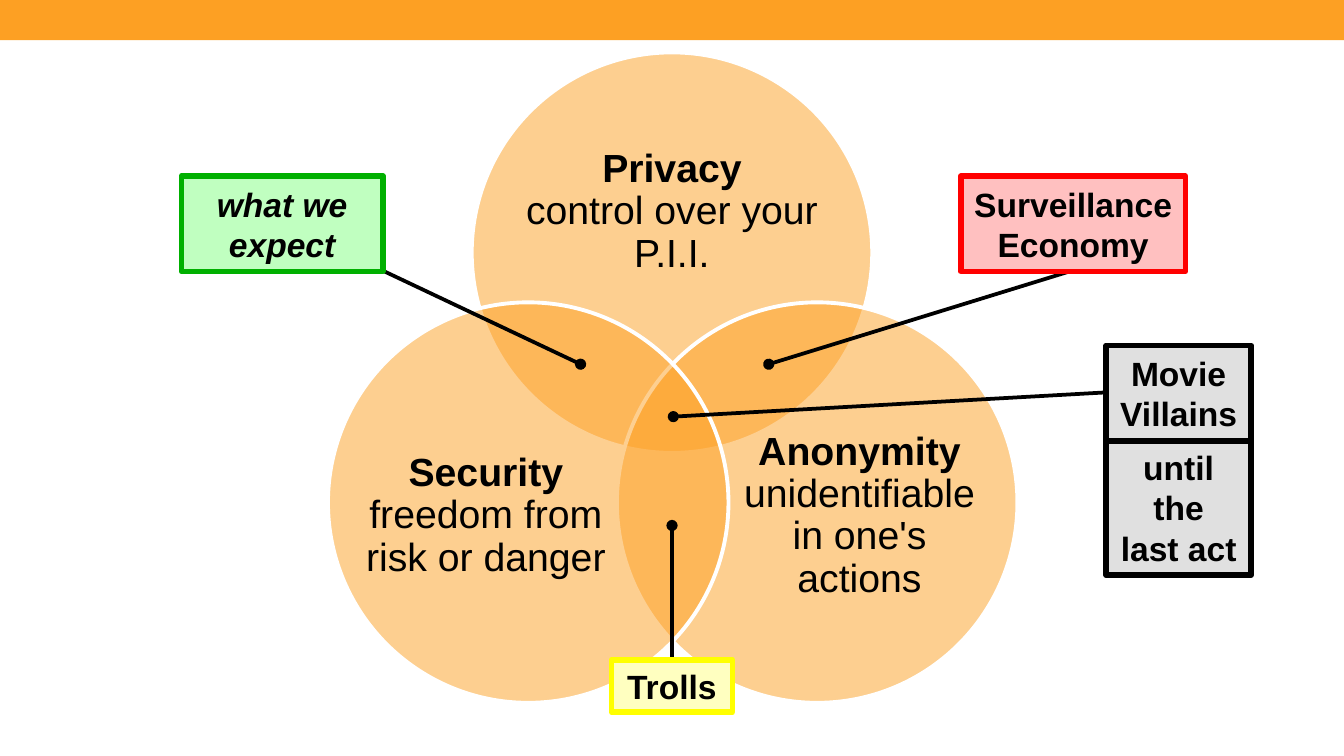
from dataclasses import dataclass

from lxml.etree import SubElement
from pptx import Presentation
from pptx.dml.color import RGBColor
from pptx.enum.shapes import MSO_CONNECTOR, MSO_SHAPE
from pptx.enum.text import MSO_ANCHOR, MSO_AUTO_SIZE, PP_ALIGN
from pptx.oxml.ns import qn
from pptx.shapes.autoshape import Shape
from pptx.slide import Slide
from pptx.text.text import _Paragraph
from pptx.util import Inches, Pt


@dataclass(frozen=True)
class Theme:
    font: str = "Arial"
    accent: str = "FDA023"
    circle_line: str = "FFFFFF"
    ink: str = "000000"
    circle_size: float = 21
    label_size: float = 18
    circle_alpha: int = 50
    circle_border: float = 2.08
    label_border: float = 3
    pointer: float = 2


@dataclass(frozen=True)
class Box:
    left: float
    top: float
    width: float
    height: float

    def lengths(self) -> list[Inches]:
        return [Inches(v) for v in (self.left, self.top, self.width, self.height)]


@dataclass(frozen=True)
class Circle:
    left: float
    top: float
    text_box: Box
    heading: str
    detail: str
    own_line: bool = False


@dataclass(frozen=True)
class Label:
    box: Box
    text: str
    fill: str
    line: str
    italic: bool = False


@dataclass(frozen=True)
class Pointer:
    x1: float
    y1: float
    x2: float
    y2: float


THEME = Theme()
DIAMETER = 2.98
LOWER_TOP = 2.25
LABEL_TOP, LABEL_HEIGHT = 1.31, 0.71

CIRCLES = [
    Circle(3.51, 0.39, Box(3.91, 0.91, 2.18, 1.34),
           "Privacy", "control over your P.I.I.", own_line=True),
    Circle(4.59, LOWER_TOP, Box(5.5, 3.02, 1.79, 1.64),
           "Anonymity", "unidentifiable in one's actions"),
    Circle(2.44, LOWER_TOP, Box(2.72, 3.02, 1.79, 1.64),
           "Security", "freedom from risk or danger"),
]
POINTERS = [
    Pointer(2.84, 2.01, 4.32, 2.71),
    Pointer(5, 4.91, 5, 3.91),
    Pointer(8.23, 2.92, 5.01, 3.1),
    Pointer(7.99, 2.01, 5.72, 2.71),
]
LABELS = [
    Label(Box(1.35, LABEL_TOP, 1.5, LABEL_HEIGHT), "what we expect",
          "C0FFC0", "00B000", italic=True),
    Label(Box(4.55, 4.91, 0.9, 0.39), "Trolls", "FFFFC0", "FFFF00"),
    Label(Box(7.15, LABEL_TOP, 1.67, LABEL_HEIGHT), "Surveillance Economy",
          "FFC0C0", "FF0000"),
    Label(Box(8.23, 3.27, 1.08, 1.01), "until\vthe\vlast act", "E0E0E0", "000000"),
    Label(Box(8.23, 2.57, 1.08, LABEL_HEIGHT), "Movie Villains", "E0E0E0", "000000"),
]


def color(value: str) -> RGBColor:
    return RGBColor.from_string(value)


def add_filled(slide: Slide, kind: MSO_SHAPE, box: Box, fill: str) -> Shape:
    sp = slide.shapes.add_shape(kind, *box.lengths())
    sp.shadow.inherit = False
    sp.fill.solid()
    sp.fill.fore_color.rgb = color(fill)
    sp.line.fill.background()
    return sp


def set_border(sp: Shape, line: str, width: float) -> None:
    sp.line.color.rgb = color(line)
    sp.line.width = Pt(width)


def style_paragraph(p: _Paragraph, size: float) -> None:
    p.alignment = PP_ALIGN.CENTER
    p.font.name = THEME.font
    p.font.size = Pt(size)
    p.font.color.rgb = color(THEME.ink)


def draw_circle(slide: Slide, circle: Circle) -> None:
    box = Box(circle.left, circle.top, DIAMETER, DIAMETER)
    sp = add_filled(slide, MSO_SHAPE.OVAL, box, THEME.accent)
    set_border(sp, THEME.circle_line, THEME.circle_border)
    rgb = sp._element.spPr.find(qn("a:solidFill")).find(qn("a:srgbClr"))
    SubElement(rgb, qn("a:alpha"), val=str(THEME.circle_alpha * 1000))


def draw_circle_text(slide: Slide, circle: Circle) -> None:
    tf = slide.shapes.add_textbox(*circle.text_box.lengths()).text_frame
    tf.word_wrap = True
    tf.vertical_anchor = MSO_ANCHOR.MIDDLE
    tf.margin_left = tf.margin_right = tf.margin_top = tf.margin_bottom = 0
    p = tf.paragraphs[0]
    style_paragraph(p, THEME.circle_size)
    p.line_spacing = 0.9
    heading = p.add_run()
    heading.text = circle.heading
    heading.font.bold = True
    if circle.own_line:
        p.add_line_break()
    detail = p.add_run()
    detail.text = circle.detail if circle.own_line else f" {circle.detail}"


def draw_pointer(slide: Slide, pointer: Pointer) -> None:
    """Draw a line that ends in a dot."""
    ends = (pointer.x1, pointer.y1, pointer.x2, pointer.y2)
    line = slide.shapes.add_connector(MSO_CONNECTOR.STRAIGHT, *map(Inches, ends))
    line.line.color.rgb = color(THEME.ink)
    line.line.width = Pt(THEME.pointer)
    SubElement(line.line._get_or_add_ln(), qn("a:tailEnd"), type="oval")
    SubElement(line._element.spPr, qn("a:effectLst"))


def draw_label(slide: Slide, label: Label) -> None:
    sp = add_filled(slide, MSO_SHAPE.RECTANGLE, label.box, label.fill)
    set_border(sp, label.line, THEME.label_border)
    tf = sp.text_frame
    tf.word_wrap = True
    tf.auto_size = MSO_AUTO_SIZE.SHAPE_TO_FIT_TEXT
    p = tf.paragraphs[0]
    p.text = label.text
    style_paragraph(p, THEME.label_size)
    p.font.bold = True
    p.font.italic = label.italic


def main() -> None:
    prs = Presentation()
    prs.slide_width = Inches(10)
    prs.slide_height = prs.slide_width * 9 // 16
    slide = prs.slides.add_slide(prs.slide_layouts[6])
    add_filled(slide, MSO_SHAPE.RECTANGLE, Box(0, 0, 10, 0.3), THEME.accent)
    for circle in CIRCLES:
        draw_circle(slide, circle)
        draw_circle_text(slide, circle)
    for pointer in POINTERS:
        draw_pointer(slide, pointer)
    for label in LABELS:
        draw_label(slide, label)
    prs.save("out.pptx")


if __name__ == "__main__":
    main()
